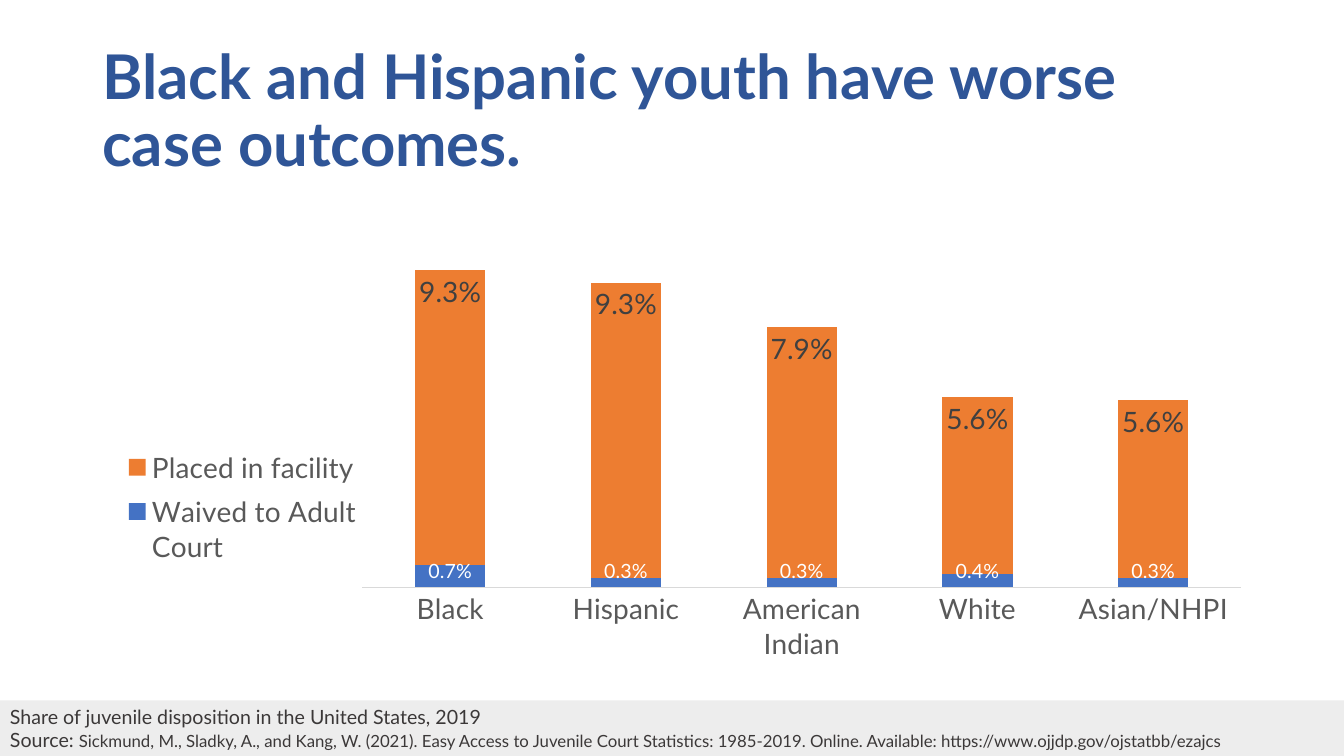
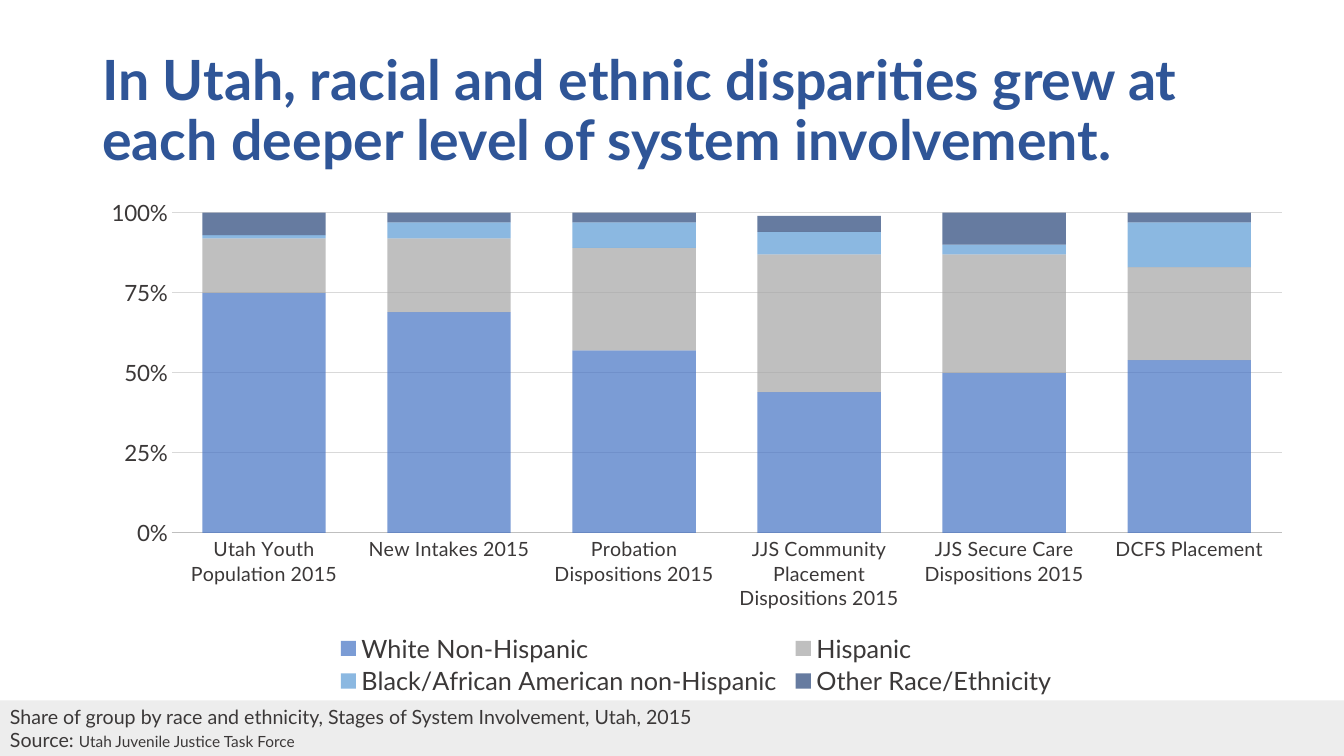
from lxml import etree
from pptx import Presentation
from pptx.chart.data import CategoryChartData
from pptx.dml.color import RGBColor
from pptx.enum.chart import XL_CHART_TYPE, XL_LABEL_POSITION, XL_LEGEND_POSITION, XL_TICK_MARK
from pptx.enum.shapes import MSO_SHAPE
from pptx.enum.text import MSO_ANCHOR, PP_ALIGN
from pptx.oxml.ns import qn
from pptx.util import Pt

STACKED = XL_CHART_TYPE.COLUMN_STACKED
INSIDE_BASE, INSIDE_END = XL_LABEL_POSITION.INSIDE_BASE, XL_LABEL_POSITION.INSIDE_END
LEGEND_LEFT, LEGEND_BOTTOM = XL_LEGEND_POSITION.LEFT, XL_LEGEND_POSITION.BOTTOM
NO_TICK = XL_TICK_MARK.NONE
RECT = MSO_SHAPE.RECTANGLE
MIDDLE = MSO_ANCHOR.MIDDLE
LEFT = PP_ALIGN.LEFT

EMU_PER_PX = 9525
WIDTH, HEIGHT = 1280, 720
FOOTER_HEIGHT = 53
FONT = "Lato"
COLORS = {
    "title": "2F5597", "text": "3B3838", "label": "404040", "muted": "595959",
    "band": "EDEDED", "white": "FFFFFF", "grid": "D9D9D9", "axis": "BFBFBF",
    "blue": "4472C4", "orange": "ED7D31", "gray": "A5A5A5", "sky": "5B9BD5",
    "navy": "264478",
}


def px(*lengths):
    return [round(n * EMU_PER_PX) for n in lengths]


def rgb(name):
    return RGBColor.from_string(COLORS[name])


def style_font(font, size, color, bold=False):
    font.name, font.size, font.bold = FONT, Pt(size), bold
    font.color.rgb = rgb(color)


def add_text(p, text, size=14, color="text", bold=False):
    r = p.add_run()
    r.text = text
    style_font(r.font, size, color, bold)


def add_title(s, text, size):
    tf = s.shapes.add_textbox(*px(88, 38, 1104, 139)).text_frame
    tf.word_wrap = True
    tf.vertical_anchor = MIDDLE
    p = tf.paragraphs[0]
    p.line_spacing = 0.9
    add_text(p, text, size=size, color="title", bold=True)


def add_footer(s, caption, source, source_size):
    top = HEIGHT - FOOTER_HEIGHT
    sp = s.shapes.add_shape(RECT, *px(0, top, WIDTH, FOOTER_HEIGHT))
    sp.shadow.inherit = False
    sp.fill.solid()
    sp.fill.fore_color.rgb = rgb("band")
    sp.line.fill.background()
    tf = sp.text_frame
    tf.word_wrap = True
    tf.vertical_anchor = MIDDLE
    p = tf.paragraphs[0]
    p.alignment = LEFT
    add_text(p, caption)
    p = tf.add_paragraph()
    p.alignment = LEFT
    add_text(p, "Source: ")
    add_text(p, source, size=source_size)


def place(parent, index, box, inner=False):
    """Give a plot area or legend a fixed box, in fractions of the chart."""
    for old in parent.findall(qn("c:layout")):
        parent.remove(old)
    layout = etree.Element(qn("c:layout"))
    manual = etree.SubElement(layout, qn("c:manualLayout"))
    settings = [("layoutTarget", "inner")] if inner else []
    settings += [("xMode", "edge"), ("yMode", "edge")]
    settings += zip("xywh", box)
    for tag, val in settings:
        etree.SubElement(manual, qn(f"c:{tag}")).set("val", str(val))
    parent.insert(index, layout)


def add_chart(s, box, cats, series, gap, size, color, plot_box):
    data = CategoryChartData(number_format="0.0%")
    data.categories = cats
    for name, _, vals in series:
        data.add_series(name, vals)
    chart = s.shapes.add_chart(STACKED, *px(*box), data).chart
    chart.has_title = False
    style_font(chart.font, size, color)
    plot = chart.plots[0]
    plot.gap_width, plot.overlap, plot.vary_by_categories = gap, 100, False
    for ser, (_, fill_color, _) in zip(plot.series, series):
        ser.format.fill.solid()
        ser.format.fill.fore_color.rgb = rgb(fill_color)
    place(chart._chartSpace.chart.plotArea, 0, plot_box, inner=True)
    return chart


def style_category_axis(chart, size, color, line):
    axis = chart.category_axis
    axis.major_tick_mark = axis.minor_tick_mark = NO_TICK
    style_font(axis.tick_labels.font, size, color)
    axis.format.line.color.rgb = rgb(line)
    axis.format.line.width = Pt(0.75)


def style_value_axis(chart, maximum, step=None):
    axis = chart.value_axis
    axis.minimum_scale, axis.maximum_scale = 0, maximum
    axis.has_major_gridlines = axis.visible = step is not None
    if step is None:
        return
    axis.major_unit = step
    axis.major_tick_mark = axis.minor_tick_mark = NO_TICK
    axis.tick_labels.number_format = "0%"
    axis.tick_labels.number_format_is_linked = False
    style_font(axis.tick_labels.font, 16, "text")
    axis.format.line.fill.background()
    grid = axis.major_gridlines.format.line
    grid.color.rgb = rgb("grid")
    grid.width = Pt(0.75)


def add_legend(chart, position, size, color, box):
    chart.has_legend = True
    legend = chart.legend
    legend.position = position
    legend.include_in_layout = False
    style_font(legend.font, size, color)
    place(legend._element, 1, box)


def add_labels(ser, position, size, color):
    labels = ser.data_labels
    labels.show_value = True
    labels.number_format = "0.0%"
    labels.number_format_is_linked = False
    labels.position = position
    style_font(labels.font, size, color)


def set_opacity(ser, percent):
    for clr in ser._element.spPr.iter(qn("a:srgbClr")):
        etree.SubElement(clr, qn("a:alpha")).set("val", str(percent * 1000))


def add_outcomes_slide(prs):
    s = prs.slides.add_slide(prs.slide_layouts[6])
    cats = ["Black", "Hispanic", "American Indian", "White", "Asian/NHPI"]
    series = [
        ("Waived to Adult Court", "blue", [0.007, 0.003, 0.003, 0.004, 0.003]),
        ("Placed in facility", "orange", [0.093, 0.093, 0.079, 0.056, 0.056]),
    ]
    chart = add_chart(s, (106, 194, 1087, 451), cats, series, gap=150, size=20,
                      color="muted", plot_box=(0.22, 0.14, 0.77, 0.67))
    style_category_axis(chart, 20, "muted", "grid")
    style_value_axis(chart, 0.1)
    add_legend(chart, LEGEND_LEFT, 20, "muted", (0.01, 0.5, 0.21, 0.28))
    waived, placed = chart.plots[0].series
    add_labels(waived, INSIDE_BASE, 14, "white")
    add_labels(placed, INSIDE_END, 20, "label")
    add_title(s, "Black and Hispanic youth have worse case outcomes.", 44)
    add_footer(s, "Share of juvenile disposition in the United States, 2019",
               "Sickmund, M., Sladky, A., and Kang, W. (2021). Easy Access to Juvenile "
               "Court Statistics: 1985-2019. Online. Available: "
               "https://www.ojjdp.gov/ojstatbb/ezajcs", 12)


def add_disparities_slide(prs):
    s = prs.slides.add_slide(prs.slide_layouts[6])
    cats = ["Utah Youth Population 2015", "New Intakes 2015",
            "Probation Dispositions 2015", "JJS Community Placement Dispositions 2015",
            "JJS Secure Care Dispositions 2015", "DCFS Placement"]
    series = [
        ("White Non-Hispanic", "blue", [0.75, 0.69, 0.57, 0.44, 0.5, 0.54]),
        ("Hispanic", "gray", [0.17, 0.23, 0.32, 0.43, 0.37, 0.29]),
        ("Black/African American non-Hispanic", "sky",
         [0.01, 0.05, 0.08, 0.07, 0.03, 0.14]),
        ("Other Race/Ethnicity", "navy", [0.07, 0.05, 0.03, 0.05, 0.11, 0.03]),
    ]
    chart = add_chart(s, (82, 178, 1162, 492), cats, series, gap=50, size=16,
                      color="text", plot_box=(0.07, 0.05, 0.91, 0.62))
    style_category_axis(chart, 14, "text", "axis")
    style_value_axis(chart, 1, step=0.25)
    add_legend(chart, LEGEND_BOTTOM, 18, "text", (0.2, 0.86, 0.6, 0.13))
    for ser in chart.plots[0].series:
        set_opacity(ser, 70)
    add_title(s, "In Utah, racial and ethnic disparities grew at each deeper level "
                 "of system involvement.", 39.6)
    add_footer(s, "Share of group by race and ethnicity, Stages of System Involvement, "
                  "Utah, 2015", "Utah Juvenile Justice Task Force", 11)


def main():
    prs = Presentation()
    prs.slide_width, prs.slide_height = px(WIDTH, HEIGHT)
    add_outcomes_slide(prs)
    add_disparities_slide(prs)
    prs.save("out.pptx")


if __name__ == "__main__":
    main()
